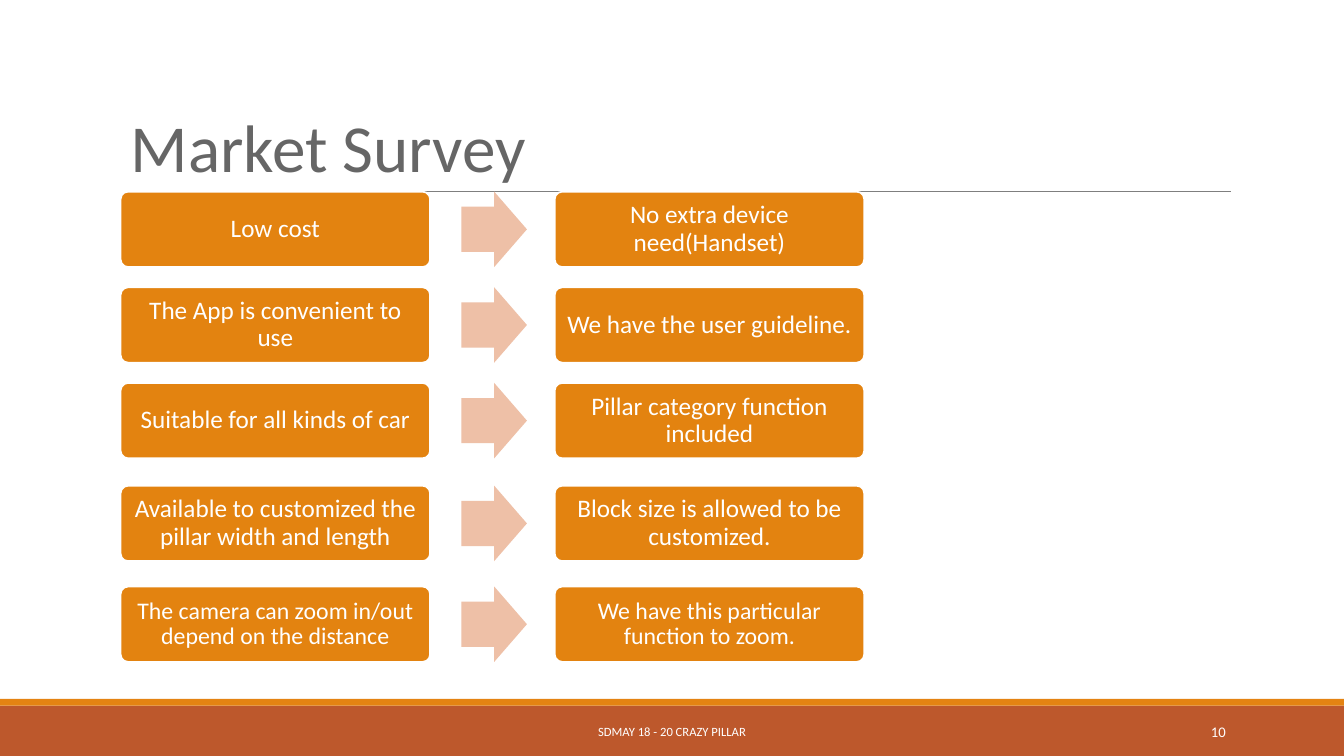
"""Builds the Market Survey slide: needs on the left, answers on the right."""
from lxml import etree
from pptx import Presentation
from pptx.dml.color import RGBColor
from pptx.enum.shapes import MSO_CONNECTOR, MSO_SHAPE
from pptx.enum.text import MSO_ANCHOR, PP_ALIGN
from pptx.oxml.ns import qn
from pptx.util import Cm, Pt

RECT, ROUNDED, ARROW = MSO_SHAPE.RECTANGLE, MSO_SHAPE.ROUNDED_RECTANGLE, MSO_SHAPE.RIGHT_ARROW
LEFT, CENTER, RIGHT = PP_ALIGN.LEFT, PP_ALIGN.CENTER, PP_ALIGN.RIGHT
MIDDLE, BOTTOM = MSO_ANCHOR.MIDDLE, MSO_ANCHOR.BOTTOM

FONT = "Calibri"
WHITE, GREY, RULE_GREY = "FFFFFF", "666666", "7F7F7F"
RUST, ORANGE, CARD_ORANGE, PEACH = "BD582C", "E48312", "E38310", "EEC0A7"

TITLE = "Market Survey"
FOOTER = "SDMAY 18 - 20 CRAZY PILLAR"
PAGE_NUMBER = "10"
SURVEY = [
    (4.83, 18, "Low cost", "No extra device need(Handset)"),
    (7.24, 18, "The App is convenient to use", "We have the user guideline."),
    (9.65, 18, "Suitable for all kinds of car", "Pillar category function included"),
    (12.24, 18, "Available to customized the pillar width and length",
     "Block size is allowed to be customized."),
    (14.78, 17, "The camera can zoom in/out depend on the distance",
     "We have this particular function to zoom."),
]

SLIDE_WIDTH, SLIDE_HEIGHT = 33.87, 19.05
BAR_TOP, STRIPE_HEIGHT = 17.78, 0.17
RULE_LEFT, RULE_RIGHT, RULE_TOP = 3.33, 31.01, 4.83
NEED_LEFT, ARROW_LEFT, ANSWER_LEFT = 3.04, 11.63, 13.98
CARD_WIDTH, ARROW_WIDTH, ROW_HEIGHT = 7.8, 1.65, 1.9
FOOTER_TOP, FOOTER_HEIGHT = 17.93, 1.02


def color(value):
    return RGBColor.from_string(value)


def write(shape, text, size, ink, align, anchor, margins, spacing=1.0):
    frame = shape.text_frame
    frame.word_wrap = True
    frame.vertical_anchor = anchor
    side, edge = margins
    frame.margin_left = frame.margin_right = Cm(side)
    frame.margin_top = frame.margin_bottom = Cm(edge)
    para = frame.paragraphs[0]
    para.alignment = align
    para.line_spacing = spacing
    span = para.add_run()
    span.text = text
    span.font.name = FONT
    span.font.size = Pt(size)
    span.font.color.rgb = color(ink)


def add_block(page, kind, area, fill, outline=None, adjustments=()):
    shape = page.shapes.add_shape(kind, *map(Cm, area))
    shape.shadow.inherit = False
    shape.fill.solid()
    shape.fill.fore_color.rgb = color(fill)
    if outline:
        shape.line.color.rgb = color(outline)
        shape.line.width = Pt(1.25)
    else:
        shape.line.fill.background()
    for index, value in enumerate(adjustments):
        shape.adjustments[index] = value
    return shape


def add_label(page, area, *style):
    box = page.shapes.add_textbox(*map(Cm, area))
    write(box, *style)


def add_rule(page):
    rule = page.shapes.add_connector(
        MSO_CONNECTOR.STRAIGHT, Cm(RULE_LEFT), Cm(RULE_TOP), Cm(RULE_RIGHT), Cm(RULE_TOP))
    rule.line.color.rgb = color(RULE_GREY)
    rule.line.width = Pt(0.75)
    etree.SubElement(rule._element.spPr, qn("a:effectLst"))


def add_row(page, top, size, need, answer):
    for left, text in ((NEED_LEFT, need), (ANSWER_LEFT, answer)):
        card = add_block(page, ROUNDED, (left, top, CARD_WIDTH, ROW_HEIGHT),
                         CARD_ORANGE, WHITE, (0.1,))
        write(card, text, size, WHITE, CENTER, MIDDLE, (0.18, 0.18), 0.9)
    add_block(page, ARROW, (ARROW_LEFT, top, ARROW_WIDTH, ROW_HEIGHT),
              PEACH, adjustments=(0.6, 0.5))


def main():
    deck = Presentation()
    deck.slide_width, deck.slide_height = Cm(SLIDE_WIDTH), Cm(SLIDE_HEIGHT)
    page = deck.slides.add_slide(deck.slide_layouts[6])
    add_block(page, RECT, (0, BAR_TOP, SLIDE_WIDTH, SLIDE_HEIGHT - BAR_TOP), RUST)
    add_block(page, RECT, (0, BAR_TOP - STRIPE_HEIGHT, SLIDE_WIDTH, STRIPE_HEIGHT), ORANGE)
    add_rule(page)
    margins = (0.25, 0.13)
    add_label(page, (3.05, 0.79, 27.94, 4.04), TITLE, 48, GREY, LEFT, BOTTOM, margins, 0.85)
    for row in SURVEY:
        add_row(page, *row)
    add_label(page, (10.24, FOOTER_TOP, 13.39, FOOTER_HEIGHT),
              FOOTER, 9, WHITE, CENTER, MIDDLE, margins)
    add_label(page, (27.51, FOOTER_TOP, 3.63, FOOTER_HEIGHT),
              PAGE_NUMBER, 10.5, WHITE, RIGHT, MIDDLE, margins)
    deck.save("out.pptx")


if __name__ == "__main__":
    main()
